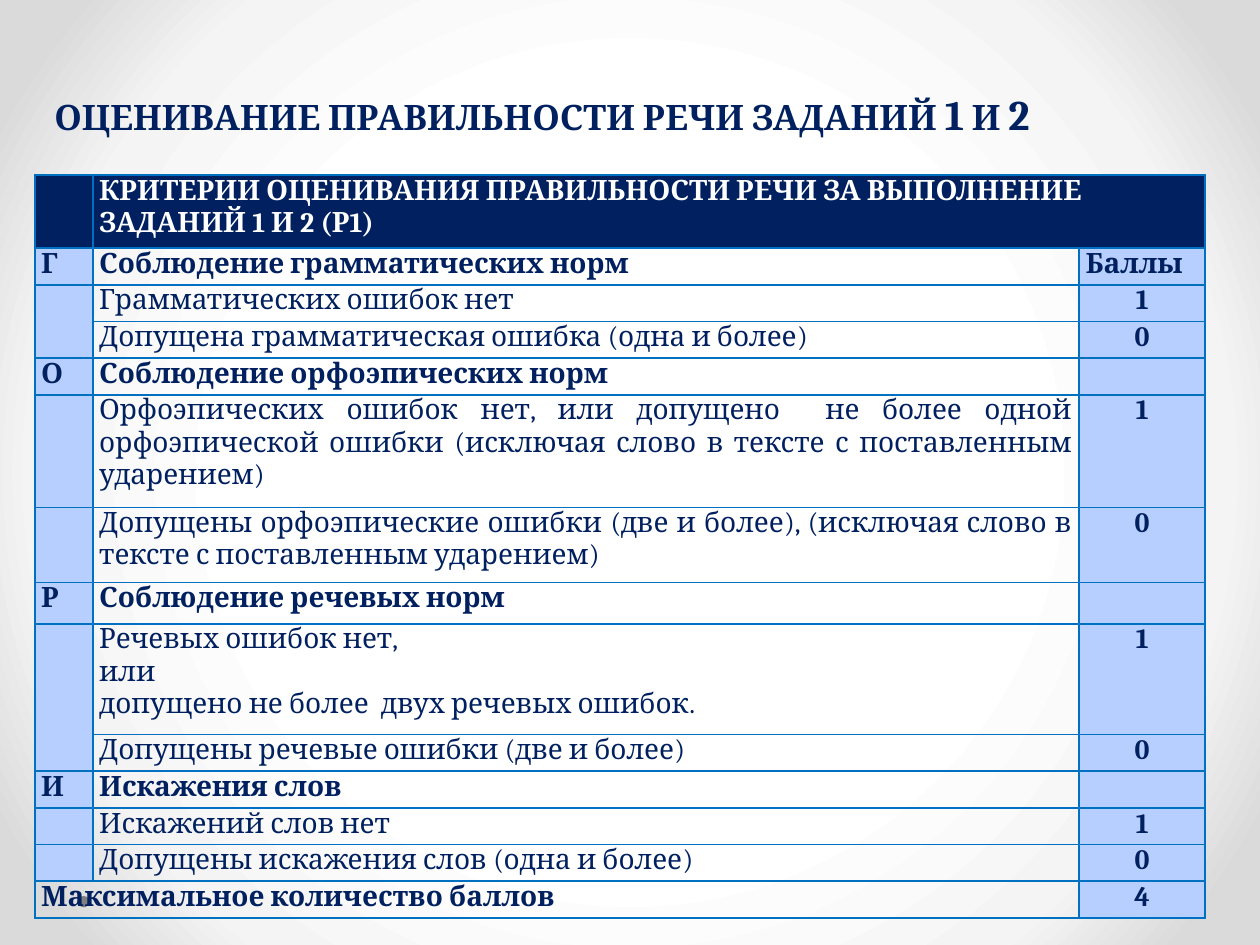
from lxml.etree import SubElement
from pptx import Presentation
from pptx.dml.color import RGBColor
from pptx.enum.shapes import MSO_SHAPE
from pptx.enum.text import MSO_ANCHOR, PP_ALIGN
from pptx.oxml import parse_xml
from pptx.oxml.ns import nsdecls, qn
from pptx.util import Pt

NAVY = RGBColor(0x00, 0x20, 0x60)
PALE = RGBColor(0xB7, 0xCF, 0xFF)
BLUE = RGBColor(0x00, 0x70, 0xC0)
GREY = RGBColor(0x80, 0x80, 0x80)
WHITE = RGBColor(0xFF, 0xFF, 0xFF)
GLOW = [(50, "FFFFFF"), (76, "F4F4F4"), (92, "DADADA")]

TITLE = [("ОЦЕНИВАНИЕ ПРАВИЛЬНОСТИ РЕЧИ ЗАДАНИЙ ", 20), ("1", 24), (" И ", 20), ("2", 24)]
COLS = [33.2, 563.6, 72]
LINE = 20.95
ROWS = [
    (41.8, "", "КРИТЕРИИ ОЦЕНИВАНИЯ ПРАВИЛЬНОСТИ РЕЧИ ЗА ВЫПОЛНЕНИЕ ЗАДАНИЙ 1 И 2 (Р1)", ""),
    (LINE, "Г", "Соблюдение грамматических норм", "Баллы"),
    (LINE, "", "Грамматических ошибок нет", "1"),
    (LINE, "", "Допущена грамматическая ошибка (одна и более)", "0"),
    (LINE, "О", "Соблюдение орфоэпических норм", ""),
    (64.3, "", "Орфоэпических ошибок нет, или допущено  не более одной орфоэпической ошибки "
               "(исключая слово в тексте с поставленным ударением)", "1"),
    (42.9, "", "Допущены орфоэпические ошибки (две и более), "
               "(исключая слово в тексте с поставленным ударением)", "0"),
    (23.7, "Р", "Соблюдение речевых норм", ""),
    (63.3, "", "Речевых ошибок нет,\nили\nдопущено не более  двух речевых ошибок.", "1"),
    (LINE, "", "Допущены речевые ошибки (две и более)", "0"),
    (LINE, "И", "Искажения слов", ""),
    (LINE, "", "Искажений слов нет", "1"),
    (LINE, "", "Допущены искажения слов (одна и более)", "0"),
    (LINE, "Максимальное количество баллов", "", "4"),
]
MERGES = [((0, 1), (0, 2)), ((2, 0), (3, 0)), ((8, 0), (9, 0)), ((13, 0), (13, 1))]


def set_attrs(obj, values):
    """Set each named attribute of an object."""
    for name, value in values.items():
        setattr(obj, name, value)


def style_font(font, size, color, bold=True):
    """Give a font the slide's typeface with a size, colour and weight."""
    set_attrs(font, {"name": "Cambria", "size": Pt(size), "bold": bold})
    font.color.rgb = color


def paint_background(s):
    """Fill the slide with a circular glow from white to grey."""
    s.background.fill.gradient()
    old = s.element.find(".//" + qn("a:gradFill"))
    stops = "".join(f'<a:gs pos="{pos * 1000}"><a:srgbClr val="{color}"/></a:gs>'
                    for pos, color in GLOW)
    old.getparent().replace(old, parse_xml(
        f'<a:gradFill {nsdecls("a")} rotWithShape="1"><a:gsLst>{stops}</a:gsLst>'
        '<a:path path="circle"><a:fillToRect l="50000" t="50000" r="50000" b="50000"/>'
        '</a:path></a:gradFill>'))


def add_dots(s, left, top, width, size):
    """Place a grey dot at each end of the footer box."""
    for x in (left, left + width - size):
        sp = s.shapes.add_shape(MSO_SHAPE.OVAL, Pt(x), Pt(top), Pt(size), Pt(size))
        sp.shadow.inherit = False
        sp.fill.solid()
        sp.fill.fore_color.rgb = GREY
        sp.line.fill.background()


def add_title(s, left, top, width, height):
    """Write the heading in the title placeholder."""
    sp = s.shapes.title
    set_attrs(sp, {"left": Pt(left), "top": Pt(top), "width": Pt(width), "height": Pt(height)})
    tf = sp.text_frame
    set_attrs(tf, {"margin_left": 0, "margin_right": 0, "margin_top": 0, "margin_bottom": 0,
                   "vertical_anchor": MSO_ANCHOR.MIDDLE, "word_wrap": True})
    p = tf.paragraphs[0]
    p.alignment = PP_ALIGN.LEFT
    for text, size in TITLE:
        r = p.add_run()
        r.text = text
        style_font(r.font, size, NAVY)


def add_borders(cell):
    """Draw a thin blue line on every side of a cell."""
    tcPr = cell._tc.get_or_add_tcPr()
    for side in "LRTB":
        ln = SubElement(tcPr, qn(f"a:ln{side}"), w=str(Pt(1)))
        SubElement(SubElement(ln, qn("a:solidFill")), qn("a:srgbClr"), val=str(BLUE))


def fill_cell(cell, text, fill, color, bold, align):
    """Format one table cell and write its text."""
    set_attrs(cell, {"margin_left": Pt(3.6), "margin_right": Pt(3.6),
                     "margin_top": 0, "margin_bottom": 0})
    add_borders(cell)
    if fill is None:
        cell.fill.background()
    else:
        cell.fill.solid()
        cell.fill.fore_color.rgb = fill
    cell.text = text
    for p in cell.text_frame.paragraphs:
        p.alignment = align
        for r in p.runs:
            style_font(r.font, 16, color, bold)
        if not p.runs:
            SubElement(p._p, qn("a:endParaRPr"), sz="1600")


def add_criteria(s, left, top, width, height):
    """Build the table of criteria and points."""
    frame = s.shapes.add_table(len(ROWS), len(COLS), Pt(left), Pt(top), Pt(width), Pt(height))
    table = frame.table
    set_attrs(table, {"first_row": False, "horz_banding": False})
    for col, w in zip(table.columns, COLS):
        col.width = Pt(w)
    last = len(ROWS) - 1
    for i, (h, *texts) in enumerate(ROWS):
        table.rows[i].height = Pt(h)
        heading = i in (0, last) or bool(texts[0])
        aligns = [PP_ALIGN.LEFT, PP_ALIGN.JUSTIFY, PP_ALIGN.CENTER]
        if i == 0:
            aligns[1] = PP_ALIGN.LEFT
        if texts[2] == "Баллы":
            aligns[2] = PP_ALIGN.LEFT
        fills = [NAVY] * 3 if i == 0 else [None if i == last else PALE, None, PALE]
        for j, text in enumerate(texts):
            fill_cell(table.cell(i, j), text, fills[j], WHITE if i == 0 else NAVY,
                      heading or j != 1, aligns[j])
    for start, end in MERGES:
        table.cell(*start).merge(table.cell(*end))


def main():
    """Build and save the slide."""
    prs = Presentation()
    set_attrs(prs, {"slide_width": Pt(720), "slide_height": Pt(540)})
    s = prs.slides.add_slide(prs.slide_layouts[5])
    paint_background(s)
    add_dots(s, 44.6, 512, 627.9, 6.5)
    add_criteria(s, 19.9, 100, sum(COLS), sum(row[0] for row in ROWS))
    add_title(s, 31, 43.2, 630, 44)
    prs.save("out.pptx")


if __name__ == "__main__":
    main()
